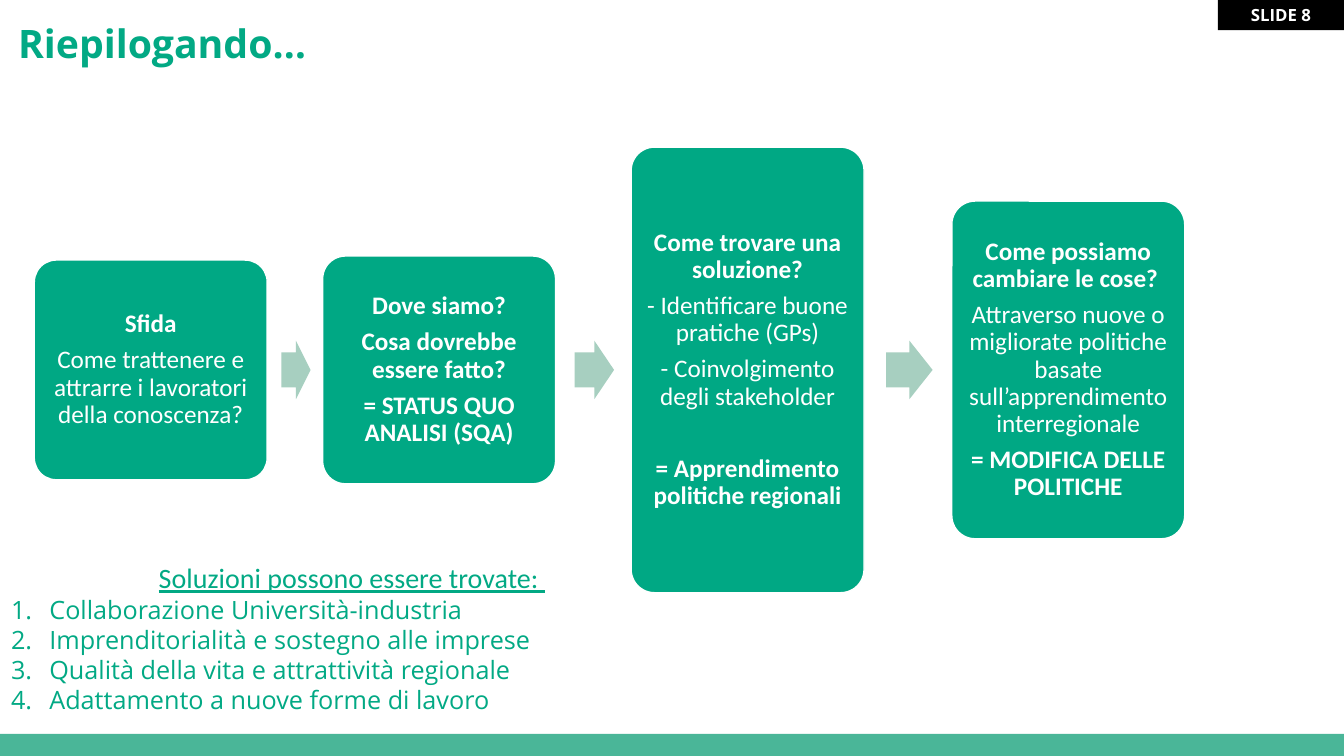
from lxml import etree
from pptx import Presentation
from pptx.dml.color import RGBColor
from pptx.enum import shapes, text
from pptx.oxml import ns
from pptx.util import Inches, Pt

GREEN = RGBColor(0x00, 0xA8, 0x84)
TEXT_GREEN = RGBColor(0x02, 0xA9, 0x84)
PALE_GREEN = RGBColor(0xA7, 0xCF, 0xC0)
BAR_GREEN = RGBColor(0x4A, 0xB6, 0x98)
BLACK = RGBColor(0, 0, 0)
WHITE = RGBColor(0xFF, 0xFF, 0xFF)

MIDDLE = 3.67
STEP_WIDTH = 2.31
ARROW_HEIGHT = 0.58
GAP = 6.3
WIDE_GAP = 32.4  # sets the conclusion apart from the points above it

# left, height, paragraphs as (wording, bold, space before)
STEPS = [
    (0.34, 2.18, [
        ("Sfida", True, 0),
        ("Come trattenere e attrarre i lavoratori della conoscenza?", False, GAP)]),
    (3.2, 2.26, [
        ("Dove siamo?", True, 0),
        ("Cosa dovrebbe essere fatto?", True, GAP),
        ("= STATUS QUO ANALISI (SQA)", True, GAP)]),
    (6.26, 4.42, [
        ("Come trovare una soluzione?", True, 0),
        ("- Identificare buone pratiche (GPs)", False, GAP),
        ("- Coinvolgimento degli stakeholder", False, GAP),
        ("= Apprendimento politiche regionali", True, WIDE_GAP)]),
    (9.44, 3.35, [
        ("Come possiamo cambiare le cose? ", True, 0),
        ("Attraverso nuove o migliorate politiche basate "
         "sull’apprendimento interregionale", False, GAP),
        ("= MODIFICA DELLE POLITICHE", True, GAP)]),
]
ARROWS = [(2.79, 0.29), (5.7, 0.39), (8.79, 0.46)]  # left, width
SOLUTIONS = [
    "Collaborazione Università-industria",
    "Imprenditorialità e sostegno alle imprese",
    "Qualità della vita e attrattività regionale",
    "Adattamento a nuove forme di lavoro",
]


def add_filled_shape(kind, left, top, width, height, color):
    shape = slide.shapes.add_shape(
        kind, Inches(left), Inches(top), Inches(width), Inches(height))
    shape.shadow.inherit = False
    shape.fill.solid()
    shape.fill.fore_color.rgb = color
    shape.line.fill.background()
    return shape


def set_font(paragraph, name, size, color, bold=False):
    font = paragraph.font
    font.name, font.size, font.bold = name, Pt(size), bold
    font.color.rgb = color


presentation = Presentation()
presentation.slide_width = Inches(13.33)
presentation.slide_height = Inches(7.5)
slide = presentation.slides.add_slide(presentation.slide_layouts[1])

# Footer bar and slide label
add_filled_shape(shapes.MSO_SHAPE.RECTANGLE, 0, 7.28, 13.33, 0.22, BAR_GREEN)
label = add_filled_shape(shapes.MSO_SHAPE.RECTANGLE, 12.08, 0, 1.25, 0.3, BLACK)
label.text_frame.text = "SLIDE 8"
label_paragraph = label.text_frame.paragraphs[0]
label_paragraph.alignment = text.PP_ALIGN.CENTER
set_font(label_paragraph, "Open Sans", 12, WHITE, bold=True)

# Title
title = slide.shapes.title
title.left, title.top = Inches(0.08), Inches(0.14)
title.width, title.height = Inches(4.12), Inches(0.57)
title.text_frame.text = "Riepilogando…"
title.text_frame.auto_size = text.MSO_AUTO_SIZE.NONE
title.text_frame.vertical_anchor = text.MSO_ANCHOR.TOP
title_paragraph = title.text_frame.paragraphs[0]
title_paragraph.alignment = text.PP_ALIGN.LEFT
set_font(title_paragraph, "Open Sans", 28, TEXT_GREEN, bold=True)

# Process steps
for left, height, wording in STEPS:
    step = add_filled_shape(shapes.MSO_SHAPE.ROUNDED_RECTANGLE,
                            left, MIDDLE - height / 2, STEP_WIDTH, height, GREEN)
    step.adjustments[0] = 0.1
    step.line.color.rgb = WHITE
    step.line.width = Pt(1)
    frame = step.text_frame
    frame.word_wrap = True
    frame.vertical_anchor = text.MSO_ANCHOR.MIDDLE
    frame.margin_left = frame.margin_right = Inches(0.07)
    frame.margin_top = frame.margin_bottom = Inches(0.07)
    frame.text = "\n".join(line for line, _, _ in wording)
    for paragraph, (_, bold, space) in zip(frame.paragraphs, wording):
        paragraph.alignment = text.PP_ALIGN.CENTER
        paragraph.line_spacing = 0.9
        paragraph.space_before = Pt(space)
        set_font(paragraph, "Calibri", 18, WHITE, bold)

for left, width in ARROWS:
    arrow = add_filled_shape(shapes.MSO_SHAPE.RIGHT_ARROW, left,
                             MIDDLE - ARROW_HEIGHT / 2, width, ARROW_HEIGHT, PALE_GREEN)
    arrow.adjustments[0] = 0.6
    arrow.adjustments[1] = 0.5

# Numbered solutions under their heading
body = slide.placeholders[1]
body.left, body.top = Inches(0.01), Inches(5.51)
body.width, body.height = Inches(6.96), Inches(1.65)
body.text_frame.text = "\n".join(["Soluzioni possono essere trovate: "] + SOLUTIONS)
body.text_frame.auto_size = text.MSO_AUTO_SIZE.NONE
heading, *items = body.text_frame.paragraphs

properties = heading._p.get_or_add_pPr()
properties.set("marL", "0")
properties.set("indent", "0")
etree.SubElement(properties, ns.qn("a:buNone"))
heading.alignment = text.PP_ALIGN.CENTER
heading.space_before = Pt(0)
set_font(heading, "Calibri", 20, TEXT_GREEN)
heading.font.underline = True

for item in items:
    properties = item._p.get_or_add_pPr()
    properties.set("marL", str(Inches(0.38)))
    properties.set("indent", str(Inches(-0.38)))
    bullet_color = etree.SubElement(properties, ns.qn("a:buClr"))
    etree.SubElement(bullet_color, ns.qn("a:srgbClr"), val=str(TEXT_GREEN))
    etree.SubElement(properties, ns.qn("a:buFont"), typeface="+mj-lt")
    etree.SubElement(properties, ns.qn("a:buAutoNum"), type="arabicPeriod")
    item.space_before = Pt(0)
    set_font(item, "Open Sans", 18, TEXT_GREEN)

presentation.save("out.pptx")
